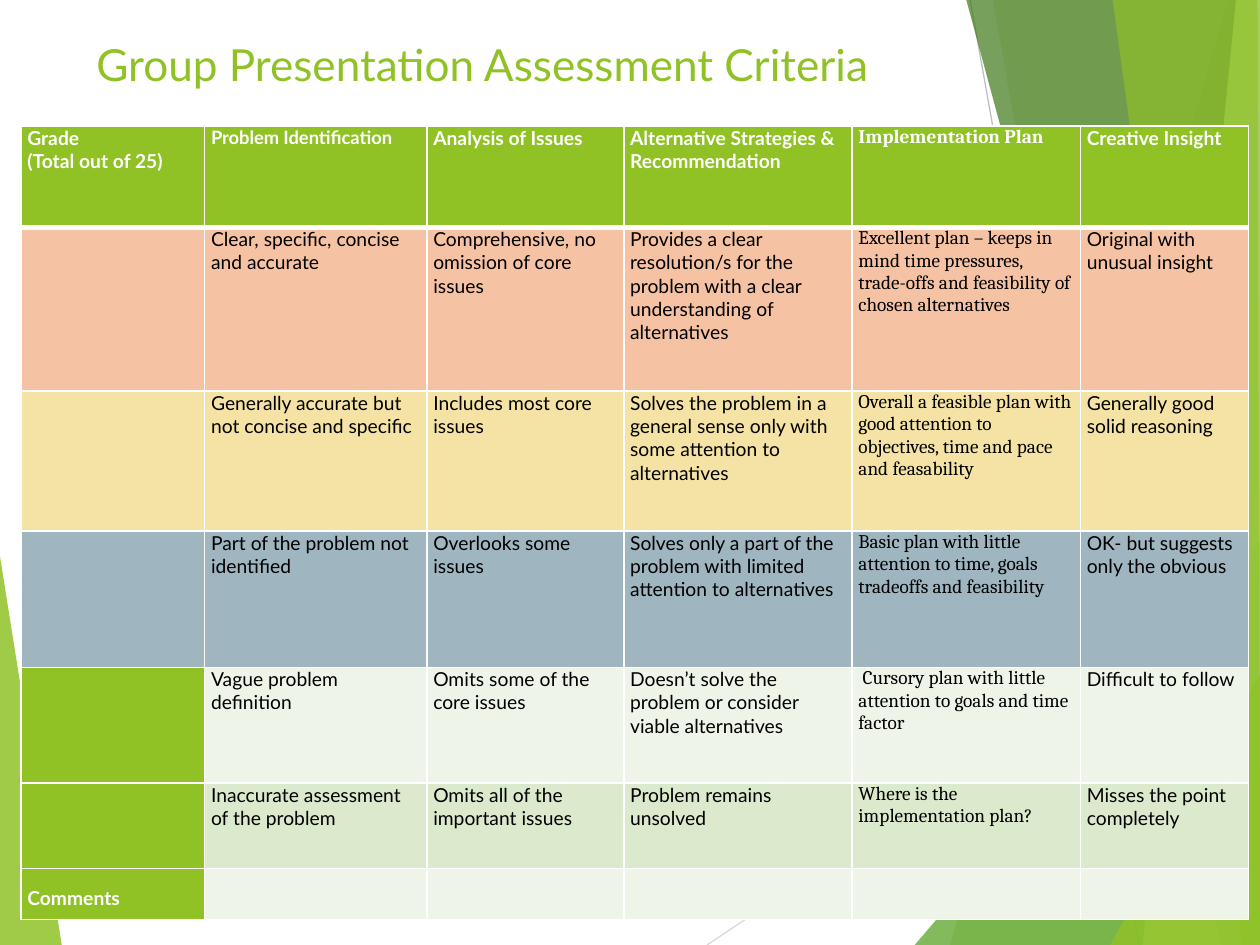
from dataclasses import dataclass

import pptx
import pptx.dml.color
import pptx.enum.shapes
import pptx.enum.text
import pptx.oxml
import pptx.oxml.ns
import pptx.util
from lxml import etree

Pt = pptx.util.Pt
qn = pptx.oxml.ns.qn
ANCHOR = pptx.enum.text.MSO_ANCHOR


@dataclass(frozen=True)
class Theme:
    green: str = "90C226"
    mid_green: str = "54A021"
    dark_green: str = "3F7819"
    lime: str = "C0E474"
    light_gray: str = "D9D9D9"
    gray: str = "BFBFBF"
    white: str = "FFFFFF"
    black: str = "000000"
    peach: str = "F5C2A3"
    sand: str = "F5E3A5"
    slate: str = "9FB6C0"
    pale: str = "EEF4E8"
    mint: str = "DBE9CD"
    font: str = "Lato"
    serif: str = "Cambria"
    title_size: float = 25.2
    body_size: float = 11
    small_size: float = 10.5


T = Theme()
W, H = 720, 540


@dataclass(frozen=True)
class Facet:
    points: tuple[tuple[float, float], ...]
    color: str
    alpha: int


@dataclass(frozen=True)
class Ray:
    start: tuple[float, float]
    end: tuple[float, float]
    color: str


@dataclass(frozen=True)
class Row:
    height: float
    label_fill: str
    fill: str
    texts: tuple[str, ...]


def right_facet(top: float, bottom: float, color: str, alpha: int) -> Facet:
    """Full-height facet from a slanted edge to the right side of the slide."""
    return Facet(((top, 0), (bottom, H), (W, H), (W, 0)), color, alpha)


def corner_facet(left: float, top: float, color: str, alpha: int) -> Facet:
    """Triangle in the bottom right corner."""
    return Facet(((left, H), (W, top), (W, H)), color, alpha)


# Background decoration, back to front
DECOR = (
    Facet(((0, 318), (35.3, H), (0, H)), T.green, 85),
    Ray((404, H), (W, 329), T.light_gray),
    Ray((554.4, 0), (650.9, H), T.gray),
    right_facet(702, 542.9, T.green, 30),
    right_facet(567.4, 661.7, T.green, 20),
    corner_facet(522.7, 308.9, T.mid_green, 72),
    right_facet(552.2, 698.4, T.dark_green, 70),
    right_facet(706.3, 653, T.lime, 70),
    Facet(((635.8, 0), (709.9, H), (W, H), (718.6, 0)), T.green, 65),
    corner_facet(634.3, 385.2, T.green, 80),
)

# Assessment grid
TABLE_LEFT, TABLE_TOP = 12, 72
COL_WIDTHS = (105, 127, 112.5, 130.5, 130.5, 96)
PLAN_COL = 4
ROWS = (
    Row(58, T.green, T.green, (
        "Grade\n(Total out of 25)", "Problem Identification", "Analysis of Issues",
        "Alternative Strategies & Recommendation", "Implementation Plan",
        "Creative Insight")),
    Row(93.5, T.peach, T.peach, (
        "", "Clear, specific, concise and accurate",
        "Comprehensive, no omission of core issues",
        "Provides a clear resolution/s for the problem with a clear "
        "understanding of alternatives",
        "Excellent plan – keeps in mind time pressures, trade-offs and "
        "feasibility of chosen alternatives",
        "Original with unusual insight")),
    Row(80, T.sand, T.sand, (
        "", "Generally accurate but not concise and specific",
        "Includes most core issues",
        "Solves the problem in a general sense only with some attention to alternatives",
        "Overall a feasible plan with good attention to objectives, time and "
        "pace and feasability",
        "Generally good solid reasoning")),
    Row(78, T.slate, T.slate, (
        "", "Part of the problem not identified", "Overlooks some issues",
        "Solves only a part of the problem with limited attention to alternatives",
        "Basic plan with little attention to time, goals tradeoffs and feasibility",
        "OK- but suggests only the obvious")),
    Row(66, T.green, T.pale, (
        "", "Vague problem definition", "Omits some of the core issues",
        "Doesn’t solve the problem or consider viable alternatives",
        " Cursory plan with little attention to goals and time factor",
        "Difficult to follow")),
    Row(49, T.green, T.mint, (
        "", "Inaccurate assessment of the problem",
        "Omits all of the important issues", "Problem remains unsolved",
        "Where is the implementation plan?", "Misses the point completely")),
    Row(29, T.green, T.pale, ("Comments", "", "", "", "", "")),
)


def rgb(color: str) -> pptx.dml.color.RGBColor:
    return pptx.dml.color.RGBColor.from_string(color)


def add_run(p, text: str, size: float, color: str, font: str = T.font,
            bold: bool = False) -> None:
    r = p.add_run()
    r.text = text
    r.font.size, r.font.name, r.font.bold = Pt(size), font, bold
    r.font.color.rgb = rgb(color)


def draw_facet(s, facet: Facet) -> None:
    points = [(Pt(x), Pt(y)) for x, y in facet.points]
    builder = s.shapes.build_freeform(*points[0], scale=1.0)
    builder.add_line_segments(points[1:], close=True)
    sp = builder.convert_to_shape()
    sp.shadow.inherit = False
    sp.line.fill.background()
    sp.fill.solid()
    sp.fill.fore_color.rgb = rgb(facet.color)
    clr = sp.fill._xPr.find(qn("a:solidFill"))[0]
    etree.SubElement(clr, qn("a:alpha"), val=str(facet.alpha * 1000))


def draw_ray(s, ray: Ray) -> None:
    ends = [Pt(v) for v in ray.start + ray.end]
    line = s.shapes.add_connector(pptx.enum.shapes.MSO_CONNECTOR.STRAIGHT, *ends)
    line.line.color.rgb = rgb(ray.color)
    line.line.width = Pt(0.75)
    etree.SubElement(line._element.spPr, qn("a:effectLst"))


def draw_title(s, text: str) -> None:
    tf = s.shapes.add_textbox(Pt(48), Pt(18), Pt(500), Pt(66)).text_frame
    tf.word_wrap = True
    add_run(tf.paragraphs[0], text, T.title_size, T.green)


def set_borders(cell, bottom: float) -> None:
    tc_pr = cell._tc.get_or_add_tcPr()
    for side, width in (("L", 1), ("R", 1), ("T", 1), ("B", bottom)):
        ln = etree.SubElement(tc_pr, qn(f"a:ln{side}"), w=str(Pt(width)))
        fill = etree.SubElement(ln, qn("a:solidFill"))
        etree.SubElement(fill, qn("a:srgbClr"), val=T.white)


def draw_cell(cell, text: str, fill: str, row: int, col: int) -> None:
    header = row == 0
    set_borders(cell, 3 if header else 1)
    cell.fill.solid()
    cell.fill.fore_color.rgb = rgb(fill)
    cell.margin_left = cell.margin_right = Pt(3.6)
    cell.margin_top = cell.margin_bottom = 0
    if row == len(ROWS) - 1:
        cell.vertical_anchor = ANCHOR.MIDDLE
        cell.margin_top = Pt(4)
    strong = header or col == 0
    size = T.small_size if header and col == 1 else T.body_size
    tf = cell.text_frame
    for i, line in enumerate(text.split("\n") if text else []):
        p = tf.add_paragraph() if i else tf.paragraphs[0]
        add_run(p, line, size, T.white if strong else T.black,
                T.serif if col == PLAN_COL else T.font, strong)


def draw_table(s) -> None:
    table = s.shapes.add_table(
        len(ROWS), len(COL_WIDTHS), Pt(TABLE_LEFT), Pt(TABLE_TOP),
        Pt(sum(COL_WIDTHS)), Pt(sum(row.height for row in ROWS))).table
    table.first_row = table.horz_banding = False
    for column, width in zip(table.columns, COL_WIDTHS):
        column.width = Pt(width)
    for i, row in enumerate(ROWS):
        table.rows[i].height = Pt(row.height)
        for j, text in enumerate(row.texts):
            draw_cell(table.cell(i, j), text, row.fill if j else row.label_fill, i, j)


def main() -> None:
    prs = pptx.Presentation()
    prs.slide_width, prs.slide_height = Pt(W), Pt(H)
    s = prs.slides.add_slide(prs.slide_layouts[6])
    for item in DECOR:
        if isinstance(item, Facet):
            draw_facet(s, item)
        else:
            draw_ray(s, item)
    draw_title(s, "Group Presentation Assessment Criteria")
    draw_table(s)
    prs.save("out.pptx")


if __name__ == "__main__":
    main()
